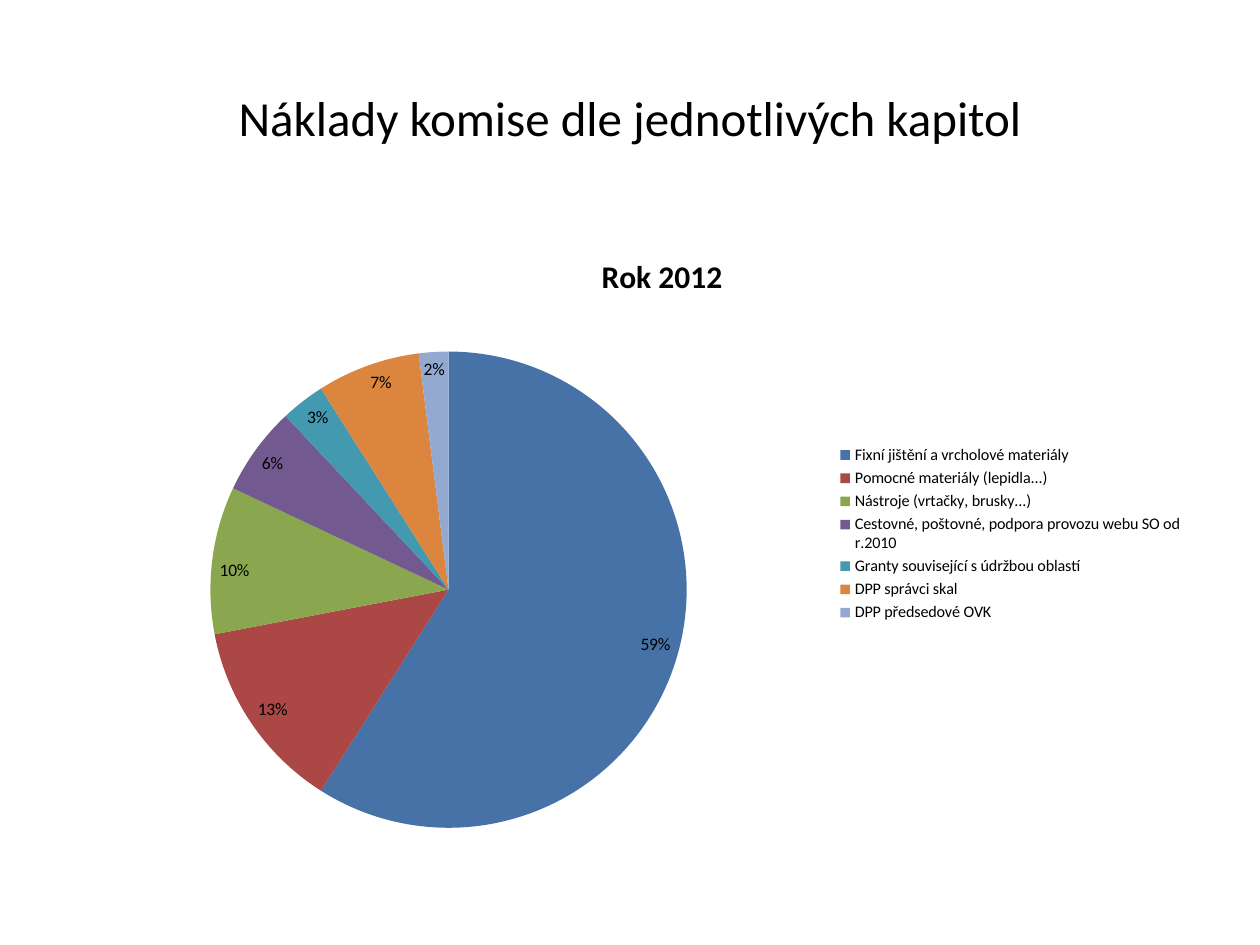
from lxml import etree
from pptx import Presentation
from pptx.chart.data import CategoryChartData
from pptx.dml.color import RGBColor
from pptx.enum.chart import XL_CHART_TYPE, XL_LABEL_POSITION, XL_LEGEND_POSITION
from pptx.enum.text import MSO_ANCHOR, PP_ALIGN
from pptx.oxml.ns import qn
from pptx.util import Pt

PIE = XL_CHART_TYPE.PIE
INSIDE_END = XL_LABEL_POSITION.INSIDE_END
RIGHT = XL_LEGEND_POSITION.RIGHT
MIDDLE = MSO_ANCHOR.MIDDLE
CENTER = PP_ALIGN.CENTER

PX = 914400 / 126
FONT = "Calibri"
BLACK = RGBColor(0x00, 0x00, 0x00)

COSTS = [
    ("Fixní jištění a vrcholové materiály", 59, RGBColor(0x46, 0x72, 0xA8)),
    ("Pomocné materiály (lepidla...)", 13, RGBColor(0xAB, 0x47, 0x44)),
    ("Nástroje (vrtačky, brusky...)", 10, RGBColor(0x8A, 0xA6, 0x4F)),
    ("Cestovné, poštovné, podpora provozu webu SO od r.2010", 6,
     RGBColor(0x72, 0x59, 0x90)),
    ("Granty související s údržbou oblastí", 3, RGBColor(0x42, 0x99, 0xB0)),
    ("DPP správci skal", 7, RGBColor(0xDC, 0x85, 0x3E)),
    ("DPP předsedové OVK", 2, RGBColor(0x93, 0xA9, 0xCF)),
]


def style(font, size, bold=False):
    font.name = FONT
    font.size = Pt(size)
    font.bold = bold
    font.color.rgb = BLACK


def set_layout(parent, index, **fractions):
    """Place a chart part at fractions (x, y, w, h) of the chart's size."""
    for old in parent.findall(qn("c:layout")):
        parent.remove(old)
    layout = etree.Element(qn("c:layout"))
    manual = etree.SubElement(layout, qn("c:manualLayout"))
    if parent.tag == qn("c:plotArea"):
        etree.SubElement(manual, qn("c:layoutTarget"), val="inner")
    for axis in "xy":
        etree.SubElement(manual, qn(f"c:{axis}Mode"), val="edge")
    for name, value in fractions.items():
        etree.SubElement(manual, qn(f"c:{name}"), val=str(value))
    parent.insert(index, layout)


prs = Presentation()
prs.slide_width = int(1260 * PX)
prs.slide_height = int(945 * PX)
slide = prs.slides.add_slide(prs.slide_layouts[6])

# Heading
sp = slide.shapes.add_textbox(*(int(v * PX) for v in (63, 38, 1134, 157)))
tf = sp.text_frame
tf.word_wrap = True
tf.vertical_anchor = MIDDLE
p = tf.paragraphs[0]
p.text = "Náklady komise dle jednotlivých kapitol"
p.alignment = CENTER
style(p.font, 28)

# Cost shares
data = CategoryChartData()
data.categories = [name for name, _, _ in COSTS]
data.add_series("Rok 2012", [share for _, share, _ in COSTS])
frame = slide.shapes.add_chart(
    PIE, *(int(v * PX) for v in (63, 224, 1134, 620)), data)
chart = frame.chart
style(chart.font, 10)

chart.has_title = True
p = chart.chart_title.text_frame.paragraphs[0]
p.text = "Rok 2012"
style(p.font, 18, bold=True)

chart.has_legend = True
legend = chart.legend
legend.position = RIGHT
legend.include_in_layout = False
style(legend.font, 9.2)

plot = chart.plots[0]
plot.vary_by_categories = True
plot.has_data_labels = True
labels = plot.data_labels
labels.show_percentage = True
labels.show_value = False
labels.number_format = "0%"
labels.number_format_is_linked = False
labels.position = INSIDE_END
style(labels.font, 10)

for i, (_, _, color) in enumerate(COSTS):
    fill = plot.series[0].points[i].format.fill
    fill.solid()
    fill.fore_color.rgb = color

root = chart.element
set_layout(root.find(".//" + qn("c:title")), 1, x=0.47, y=0.04)
set_layout(root.find(".//" + qn("c:plotArea")), 0, x=0.13, y=0.2, w=0.42, h=0.78)
set_layout(root.find(".//" + qn("c:legend")), 1, x=0.68, y=0.35, w=0.31, h=0.3)

prs.save("out.pptx")
